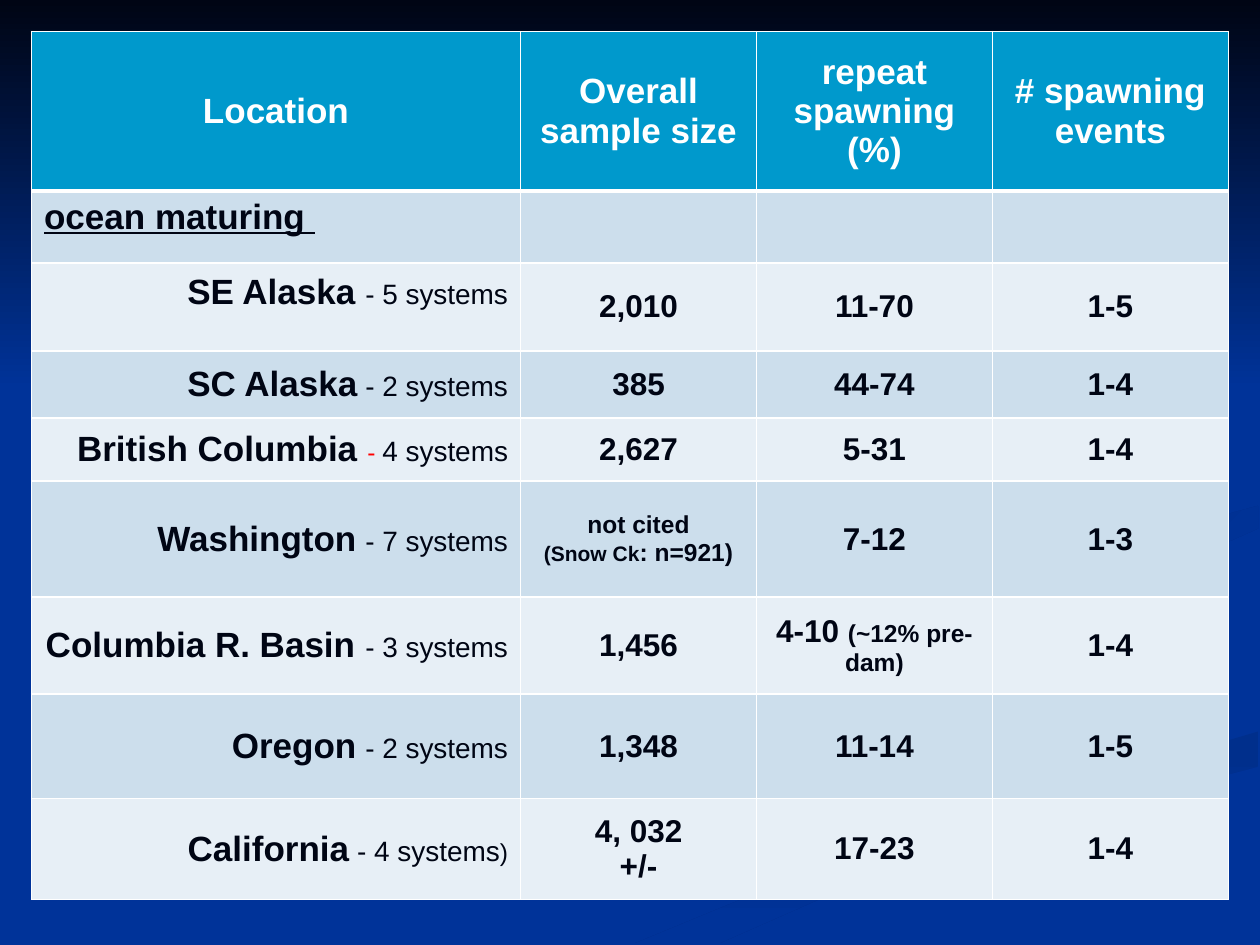
from dataclasses import dataclass

from lxml import etree
from pptx import Presentation
from pptx import util as u
from pptx.dml.color import RGBColor
from pptx.enum import text
from pptx.oxml.ns import qn

LEFT, CENTER, RIGHT = text.PP_ALIGN.LEFT, text.PP_ALIGN.CENTER, text.PP_ALIGN.RIGHT


@dataclass(frozen=True)
class Theme:
    font: str = "Arial"
    blue: str = "003399"
    shade: str = "002F8C"
    night: str = "000514"
    header: str = "0099CC"
    bands: tuple = ("CCDEEC", "E7EFF6")
    white: str = "FFFFFF"
    red: str = "FF0000"
    name: int = 20
    value: int = 18
    detail: int = 16
    note: int = 14
    tiny: int = 12


T = Theme()


class SlideBuilder:
    def __init__(self, slide, theme):
        self.slide, self.theme = slide, theme

    def background(self, color):
        fill = self.slide.background.fill
        fill.solid()
        fill.fore_color.rgb = RGBColor.from_string(color)

    def outline(self, points, colors, angle):
        """Closed gradient shape; the angle runs clockwise."""
        fb = self.slide.shapes.build_freeform(*points[0], scale=u.Pt(1))
        fb.add_line_segments(points[1:], close=True)
        sp = fb.convert_to_shape()
        sp.shadow.inherit = False
        sp.line.fill.background()
        sp.fill.gradient()
        sp.fill.gradient_angle = -angle % 360
        for stop, color in zip(sp.fill.gradient_stops, colors):
            stop.color.rgb = RGBColor.from_string(color)

    def table(self, left, top, widths, heights):
        frame = self.slide.shapes.add_table(
            len(heights), len(widths), u.Pt(left), u.Pt(top),
            u.Pt(sum(widths)), u.Pt(sum(heights)))
        for col, width in zip(frame.table.columns, widths):
            col.width = u.Pt(width)
        for row, height in zip(frame.table.rows, heights):
            row.height = u.Pt(height)
        return frame.table

    def borders(self, cell, top=1, bottom=1):
        tc_pr = cell._tc.get_or_add_tcPr()
        widths = {"lnL": 1, "lnR": 1, "lnT": top, "lnB": bottom}
        for i, (tag, width) in enumerate(widths.items()):
            ln = etree.Element(qn("a:" + tag), w=str(u.Pt(width)))
            fill = etree.SubElement(ln, qn("a:solidFill"))
            etree.SubElement(fill, qn("a:srgbClr"), val=self.theme.white)
            tc_pr.insert(i, ln)

    def cell(self, cell, paragraphs, fill, color, align=CENTER):
        """Each paragraph is a list of (text, size, font overrides)."""
        cell.fill.solid()
        cell.fill.fore_color.rgb = RGBColor.from_string(fill)
        cell.vertical_anchor = text.MSO_ANCHOR.MIDDLE
        tf = cell.text_frame
        for i, runs in enumerate(paragraphs):
            p = tf.add_paragraph() if i else tf.paragraphs[0]
            p.alignment = align
            for words, size, style in runs:
                r = p.add_run()
                r.text = words
                r.font.name = self.theme.font
                r.font.size = u.Pt(size)
                r.font.bold = style.get("bold", True)
                r.font.underline = style.get("underline", False)
                r.font.color.rgb = RGBColor.from_string(style.get("color", color))


# Backdrop shapes, back to front: points, gradient colours, angle
BACKDROP = [
    ([(363, 539), (501, 482), (719, 418), (719, 438), (520, 491), (411, 539)],
     (T.shade, T.blue), 90),
    ([(563, 331), (719, 289), (719, 302), (595, 357)], (T.shade, T.blue), 45),
    ([(0, 0), (0, 222), (720, 222), (720, 0)], (T.night, T.blue), 90),
]

HEADERS = ["Location", "Overall sample size", "repeat spawning (%)", "# spawning events"]
PLAIN = {"bold": False}


def value(words):
    return [[(words, T.value, {})]]


def place(name, systems, gap=T.detail):
    return [(name, T.name, {}), (" ", gap, {}), (f"- {systems} systems", T.detail, PLAIN)]


# Location runs, sample size, repeat spawning, spawning events
ROWS = [
    (place("SE Alaska", 5, T.name), value("2,010"), value("11-70"), "1-5"),
    (place("SC Alaska", 2), value("385"), value("44-74"), "1-4"),
    ([("British Columbia ", T.name, {}), ("- ", T.note, {"bold": False, "color": T.red}),
      ("4 systems", T.detail, PLAIN)], value("2,627"), value("5-31"), "1-4"),
    (place("Washington", 7, T.value),
     [[("not cited", T.note, {})], [("(Snow Ck", T.tiny, {}), (": n=921)", T.note, {})]],
     value("7-12"), "1-3"),
    (place("Columbia R. Basin", 3, T.name), value("1,456"),
     [[("4-10 ", T.value, {}), ("(~12% pre-dam)", T.note, {})]], "1-4"),
    (place("Oregon", 2, T.value), value("1,348"), value("11-14"), "1-5"),
    (place("California", 4) + [(")", T.note, PLAIN)],
     value("4, 032") + value("+/-"), value("17-23"), "1-4"),
]


def main():
    prs = Presentation()
    prs.slide_width, prs.slide_height = u.Pt(720), u.Pt(540)
    s = SlideBuilder(prs.slides.add_slide(prs.slide_layouts[6]), T)

    # Backdrop
    s.background(T.blue)
    for points, colors, angle in BACKDROP:
        s.outline(points, colors, angle)

    # Table header
    table = s.table(18, 18, [279.5] + [134.8] * 3,
                    [91.2, 41, 50.4, 38.4, 36, 66.2, 55.4, 59.8, 57.6])
    for c, title in enumerate(HEADERS):
        s.cell(table.cell(0, c), [[(title, T.name, {})]], T.header, T.white)
        s.borders(table.cell(0, c), bottom=3)

    # Group heading row
    group = [[("ocean maturing ", T.name, {"underline": True})]]
    for c in range(len(HEADERS)):
        s.cell(table.cell(1, c), [] if c else group, T.bands[0], T.night, LEFT)
        s.borders(table.cell(1, c), top=3)
    table.cell(1, 0).vertical_anchor = text.MSO_ANCHOR.TOP

    # Location rows
    for r, (location, sample, repeat, events) in enumerate(ROWS, start=2):
        for c, content in enumerate([[location], sample, repeat, value(events)]):
            s.cell(table.cell(r, c), content, T.bands[(r - 1) % 2], T.night,
                   CENTER if c else RIGHT)
            s.borders(table.cell(r, c))
    table.cell(2, 0).margin_bottom = u.Pt(20)

    prs.save("out.pptx")


if __name__ == "__main__":
    main()
